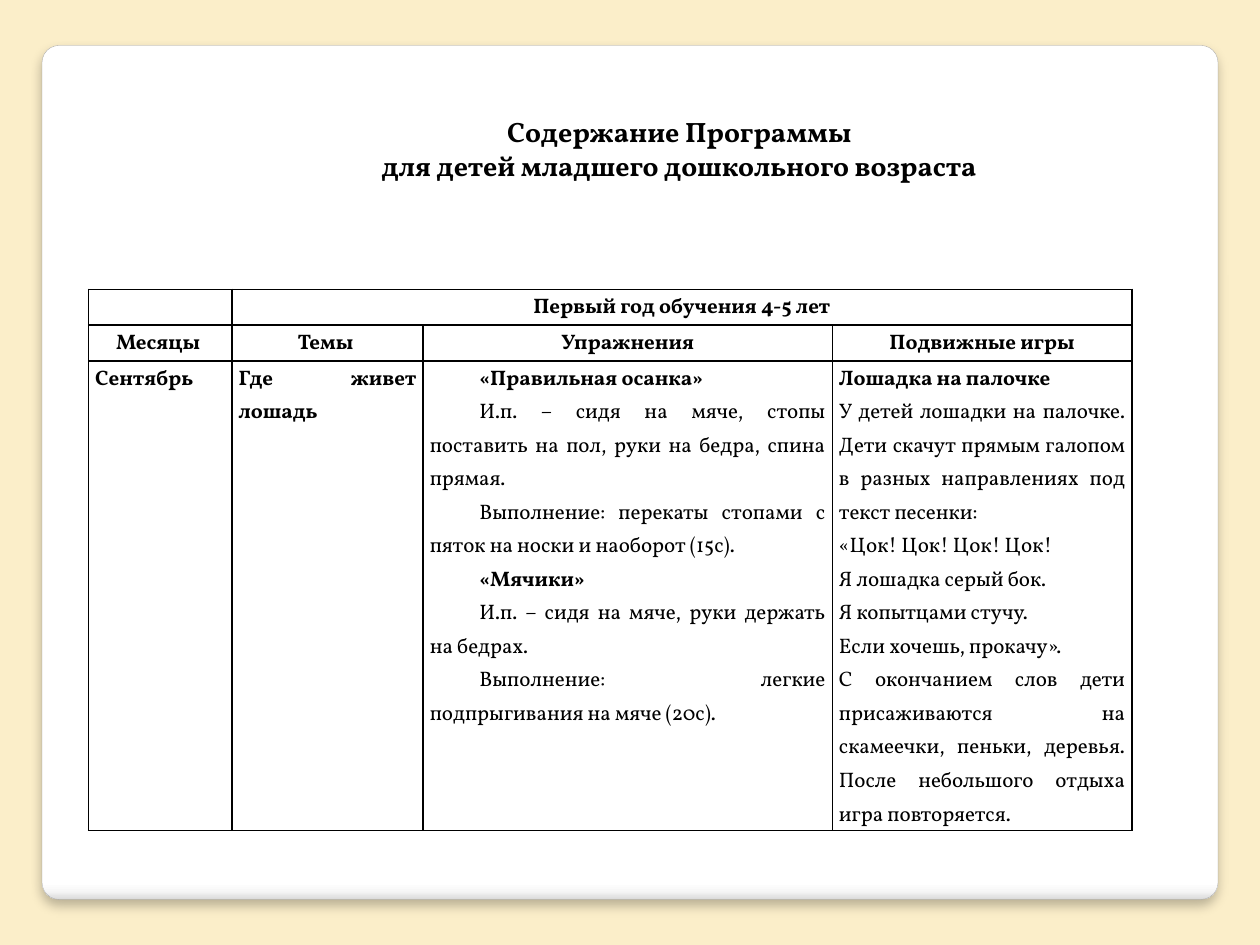
from lxml import etree
from pptx import Presentation
from pptx.dml.color import RGBColor
from pptx.enum.shapes import MSO_SHAPE
from pptx.enum.text import MSO_ANCHOR, PP_ALIGN
from pptx.oxml import parse_xml
from pptx.oxml.ns import nsdecls, qn
from pptx.util import Pt

FONT = "Vollkorn"
INDENT = 28.35
COLUMN_WIDTHS = [82, 109.3, 233.8, 171.2]
ROW_HEIGHTS = [20.4, 20.4, 255]
HEADINGS = ["Месяцы ", "Темы ", "Упражнения", "Подвижные игры"]
EXERCISES = [
    "«Правильная осанка»",
    "И.п. – сидя на мяче, стопы поставить на пол, руки на бедра, спина прямая.",
    "Выполнение: перекаты стопами с пяток на носки и наоборот (15с).",
    "«Мячики»",
    "И.п. – сидя на мяче, руки держать на бедрах.",
    "Выполнение: легкие подпрыгивания на мяче (20с).",
]
GAMES = [
    "Лошадка на палочке",
    "У детей лошадки на палочке. Дети скачут прямым галопом в разных направлениях под текст песенки:",
    "«Цок! Цок! Цок! Цок!",
    "Я лошадка серый бок.",
    "Я копытцами стучу.",
    "Если хочешь, прокачу».",
    "С окончанием слов дети присаживаются на скамеечки, пеньки, деревья. "
    "После небольшого отдыха игра повторяется.",
]


def color(value):
    return RGBColor.from_string(value)


def write(frame, lines, size=12, bold_lines=None, align=PP_ALIGN.CENTER, spacing=None, indent=0):
    frame.word_wrap = True
    for index, line in enumerate(lines):
        paragraph = frame.paragraphs[0] if index == 0 else frame.add_paragraph()
        paragraph.alignment = align
        paragraph.line_spacing = spacing
        if indent:
            properties = paragraph._p.get_or_add_pPr()
            properties.set("marL", "0")
            properties.set("indent", str(Pt(indent)))
        run = paragraph.add_run()
        run.text = line
        run.font.name = FONT
        run.font.size = Pt(size)
        run.font.bold = bold_lines is None or index in bold_lines
        run.font.color.rgb = color("000000")


def add_panel(slide):
    panel = slide.shapes.add_shape(MSO_SHAPE.ROUNDED_RECTANGLE, Pt(24), Pt(26), Pt(672), Pt(488))
    panel.adjustments[0] = 0.02
    panel.shadow.inherit = False
    panel.line.color.rgb = color("A4A4A4")
    panel.line.width = Pt(0.16)
    panel.fill.gradient()
    panel.fill.gradient_angle = 270
    stops = panel._element.spPr.find(qn("a:gradFill")).find(qn("a:gsLst"))
    for stop in list(stops):
        stops.remove(stop)
    for position, shade in [(0, "FFFFFF"), (98, "FFFFFF"), (99, "F7F7F7"), (100, "DADADA")]:
        stop = etree.SubElement(stops, qn("a:gs"), pos=str(position * 1000))
        etree.SubElement(stop, qn("a:srgbClr"), val=shade)
    effects = panel._element.spPr.find(qn("a:effectLst"))
    effects.append(parse_xml(
        f'<a:outerShdw {nsdecls("a")} blurRad="{Pt(6)}" dist="{Pt(4)}" dir="5400000" '
        'algn="t" rotWithShape="0"><a:srgbClr val="000000"><a:alpha val="25000"/>'
        '</a:srgbClr></a:outerShdw>'))


def format_cell(cell):
    cell.margin_left = cell.margin_right = Pt(3.75)
    cell.margin_top = cell.margin_bottom = 0
    cell.fill.background()
    properties = cell._tc.get_or_add_tcPr()
    for index, side in enumerate(["lnL", "lnR", "lnT", "lnB"]):
        properties.insert(index, parse_xml(
            f'<a:{side} {nsdecls("a")} w="{Pt(1)}"><a:solidFill>'
            f'<a:srgbClr val="000000"/></a:solidFill></a:{side}>'))
    if not cell.text:
        etree.SubElement(cell.text_frame.paragraphs[0]._p, qn("a:endParaRPr"), sz="1200")


def add_program(slide):
    frame = slide.shapes.add_table(
        3, 4, Pt(50.6), Pt(165.4), Pt(sum(COLUMN_WIDTHS)), Pt(sum(ROW_HEIGHTS)))
    program = frame.table
    program.first_row = program.horz_banding = False
    for column, width in zip(program.columns, COLUMN_WIDTHS):
        column.width = Pt(width)
    for row, height in zip(program.rows, ROW_HEIGHTS):
        row.height = Pt(height)

    program.cell(0, 1).merge(program.cell(0, 3))
    write(program.cell(0, 1).text_frame, ["Первый год обучения 4-5 лет"], spacing=1.15)
    for column, heading in enumerate(HEADINGS):
        write(program.cell(1, column).text_frame, [heading], spacing=1.15)
    september = [
        (["Сентябрь "], None, 0),
        (["Где живет лошадь"], None, 0),
        (EXERCISES, {0, 3}, INDENT),
        (GAMES, {0}, 0),
    ]
    for column, (lines, bold_lines, indent) in enumerate(september):
        write(program.cell(2, column).text_frame, lines, bold_lines=bold_lines,
              align=PP_ALIGN.JUSTIFY, spacing=1.15, indent=indent)
    for cell in program.iter_cells():
        format_cell(cell)


def add_title(slide):
    title = slide.shapes.add_textbox(Pt(146), Pt(62), Pt(456), Pt(67.5))
    title.text_frame.vertical_anchor = MSO_ANCHOR.TOP
    write(title.text_frame, ["Содержание Программы", "для детей младшего дошкольного возраста"],
          size=16, indent=INDENT)


def main():
    presentation = Presentation()
    presentation.slide_width = Pt(720)
    presentation.slide_height = Pt(540)
    slide = presentation.slides.add_slide(presentation.slide_layouts[6])
    slide.background.fill.solid()
    slide.background.fill.fore_color.rgb = color("FBEEC9")
    add_panel(slide)
    add_program(slide)
    add_title(slide)
    presentation.save("out.pptx")


if __name__ == "__main__":
    main()
